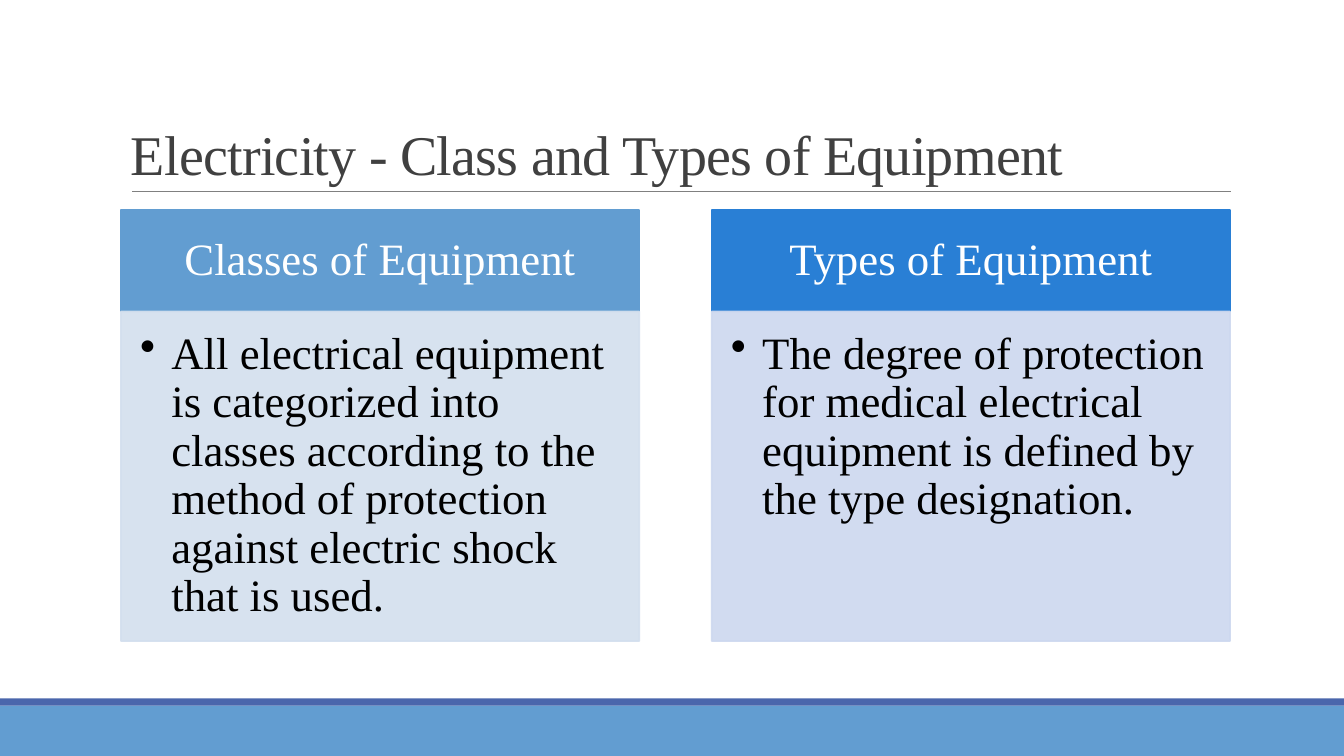
from dataclasses import dataclass

from lxml import etree
from pptx import Presentation
from pptx.dml.color import RGBColor
from pptx.enum import shapes, text
from pptx.oxml.ns import qn
from pptx.util import Inches, Pt

FONT = "Times New Roman"
WHITE = RGBColor(0xFF, 0xFF, 0xFF)
BLACK = RGBColor(0, 0, 0)
TITLE_GRAY = RGBColor(0x40, 0x40, 0x40)
RULE_GRAY = RGBColor(0x80, 0x80, 0x80)
SKY = RGBColor(0x62, 0x9D, 0xD1)
INDIGO = RGBColor(0x4A, 0x66, 0xAC)
BLUE = RGBColor(0x29, 0x7F, 0xD5)
PALE_SKY = RGBColor(0xD3, 0xDF, 0xEE)
PALE_BLUE = RGBColor(0xCD, 0xD8, 0xEF)

LEFT, COLUMN_WIDTH, COLUMN_STEP = 1.2, 5.14, 5.86
HEADER_TOP, HEADER_HEIGHT, BODY_HEIGHT = 2.08, 1.01, 3.27


@dataclass(frozen=True)
class Column:
    heading: str
    body: str
    header_color: RGBColor
    body_color: RGBColor


COLUMNS = [
    Column("Classes of Equipment",
           "All electrical equipment is categorized into classes according to "
           "the method of protection against electric shock that is used.",
           SKY, PALE_SKY),
    Column("Types of Equipment",
           "The degree of protection for medical electrical equipment is "
           "defined by the type designation.",
           BLUE, PALE_BLUE),
]


def add_block(slide, left: float, top: float, width: float, height: float,
              color: RGBColor, outlined: bool = False, opacity: int = 100):
    """Add a flat rectangle, optionally outlined in its own colour."""
    block = slide.shapes.add_shape(
        shapes.MSO_SHAPE.RECTANGLE,
        Inches(left), Inches(top), Inches(width), Inches(height))
    block.shadow.inherit = False
    block.fill.solid()
    block.fill.fore_color.rgb = color
    if outlined:
        block.line.color.rgb = color
        block.line.width = Pt(1.25)
    else:
        block.line.fill.background()
    if opacity < 100:
        for tint in block._element.spPr.iter(qn("a:srgbClr")):
            etree.SubElement(tint, qn("a:alpha"), val=str(opacity * 1000))
    return block


def write(shape, wording: str, size: int, color: RGBColor,
          anchor: text.MSO_ANCHOR, align: text.PP_ALIGN,
          insets: tuple[float, float, float, float], spacing: float = 0.9):
    """Fill the shape with one paragraph; insets run left, top, right, bottom."""
    frame = shape.text_frame
    frame.text = wording
    frame.word_wrap = True
    frame.vertical_anchor = anchor
    (frame.margin_left, frame.margin_top,
     frame.margin_right, frame.margin_bottom) = map(Inches, insets)
    paragraph = frame.paragraphs[0]
    paragraph.alignment = align
    paragraph.line_spacing = spacing
    font = paragraph.runs[0].font
    font.name, font.size, font.color.rgb = FONT, Pt(size), color
    return paragraph


def add_bullet(paragraph, indent: float) -> None:
    properties = paragraph._p.get_or_add_pPr()
    properties.set("marL", str(Inches(indent)))
    properties.set("indent", str(-Inches(indent)))
    etree.SubElement(properties, qn("a:buChar"), char="•")


def add_title(slide) -> None:
    rule = slide.shapes.add_connector(
        shapes.MSO_CONNECTOR.STRAIGHT,
        Inches(1.31), Inches(1.9), Inches(12.21), Inches(1.9))
    rule.line.color.rgb = RULE_GRAY
    rule.line.width = Pt(0.5)
    etree.SubElement(rule._element.spPr, qn("a:effectLst"))

    title = slide.shapes.add_textbox(
        Inches(LEFT), Inches(0.31), Inches(11), Inches(1.59))
    paragraph = write(title, "Electricity - Class and Types of Equipment", 40,
                      TITLE_GRAY, text.MSO_ANCHOR.BOTTOM, text.PP_ALIGN.LEFT,
                      (0.1, 0.05, 0.1, 0.05), 0.85)
    paragraph.runs[0]._r.get_or_add_rPr().set("spc", "-50")


def add_column(slide, column: Column, left: float) -> None:
    header = add_block(slide, left, HEADER_TOP, COLUMN_WIDTH, HEADER_HEIGHT,
                       column.header_color, outlined=True)
    write(header, column.heading, 32, WHITE, text.MSO_ANCHOR.MIDDLE,
          text.PP_ALIGN.CENTER, (0.25, 0.14, 0.25, 0.14))

    body = add_block(slide, left, HEADER_TOP + HEADER_HEIGHT, COLUMN_WIDTH,
                     BODY_HEIGHT, column.body_color, outlined=True, opacity=90)
    paragraph = write(body, column.body, 32, BLACK, text.MSO_ANCHOR.TOP,
                      text.PP_ALIGN.LEFT, (0.19, 0.19, 0.25, 0.28))
    add_bullet(paragraph, 0.31)


def main() -> None:
    deck = Presentation()
    deck.slide_width, deck.slide_height = Inches(13.33), Inches(7.5)
    slide = deck.slides.add_slide(deck.slide_layouts[6])
    add_block(slide, 0, 7, 13.33, 0.5, SKY)
    add_block(slide, 0, 6.93, 13.33, 0.07, INDIGO)
    add_title(slide)
    for index, column in enumerate(COLUMNS):
        add_column(slide, column, LEFT + index * COLUMN_STEP)
    deck.save("out.pptx")


if __name__ == "__main__":
    main()
